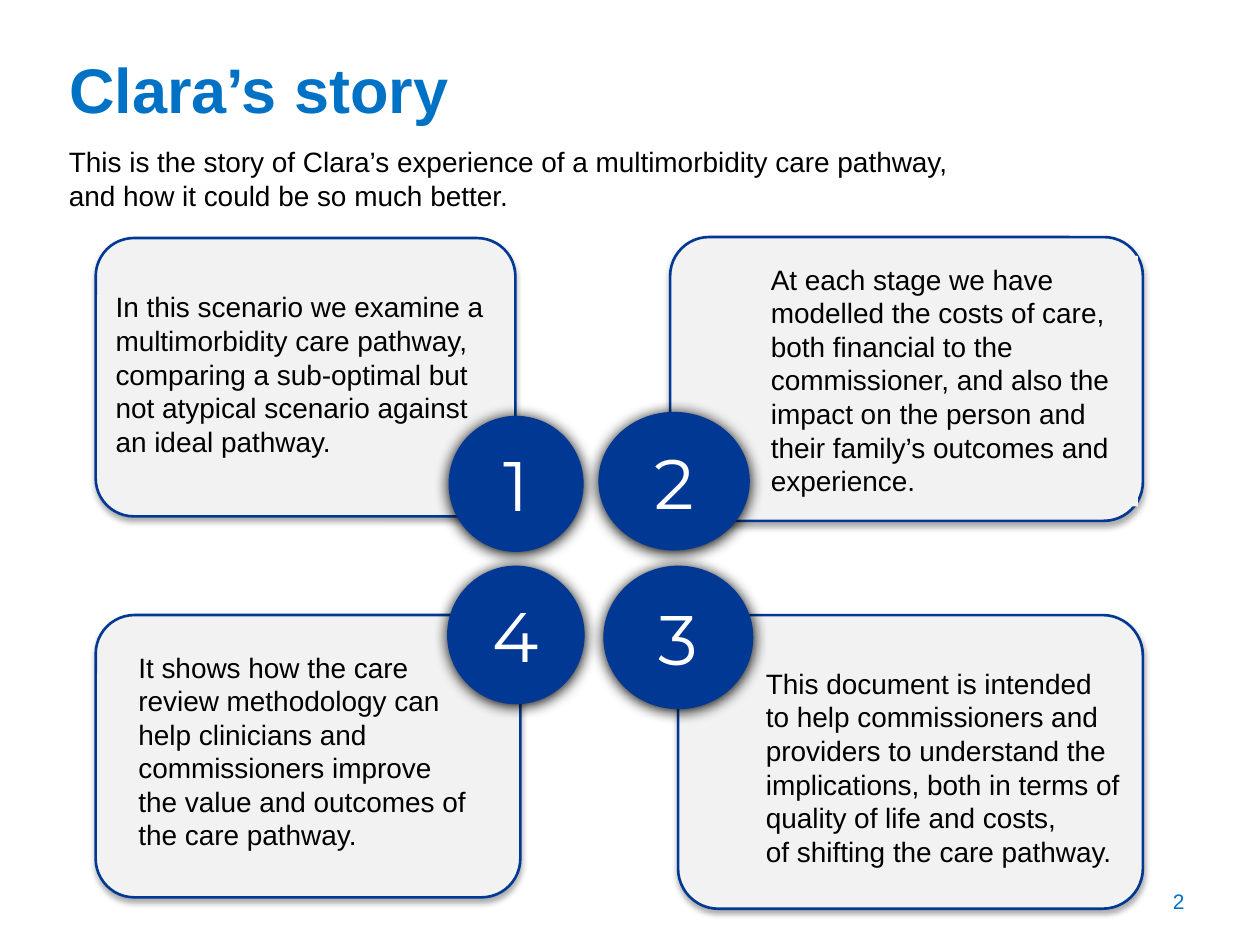
from lxml import etree
from pptx import Presentation
from pptx.dml.color import RGBColor
from pptx.enum.shapes import MSO_SHAPE
from pptx.enum.text import MSO_ANCHOR, PP_ALIGN
from pptx.oxml.ns import qn
from pptx.util import Cm, Pt

ROUNDED, RECTANGLE, OVAL = MSO_SHAPE.ROUNDED_RECTANGLE, MSO_SHAPE.RECTANGLE, MSO_SHAPE.OVAL
LEFT, CENTER, RIGHT = PP_ALIGN.LEFT, PP_ALIGN.CENTER, PP_ALIGN.RIGHT
TOP, MIDDLE = MSO_ANCHOR.TOP, MSO_ANCHOR.MIDDLE

BLUE = RGBColor(0x00, 0x72, 0xC6)
NAVY = RGBColor(0x00, 0x38, 0x93)
PALE_GREY = RGBColor(0xF2, 0xF2, 0xF2)
BLACK = RGBColor(0, 0, 0)
WHITE = RGBColor(0xFF, 0xFF, 0xFF)
BODY_FONT = "Arial"
NUMBER_FONT = "Montserrat"

TITLE = "Clara’s story"
INTRODUCTION = ("This is the story of Clara’s experience of a multimorbidity care pathway, "
                "and how it could be so much better.")

STEPS = [
    ("1", (1.93, 4.8, 8.46, 5.61), (0.15, 0.92, 8.03, 3.68), (7.14, 3.61, 2.67, 2.69),
     ["In this scenario we examine a multimorbidity care pathway, comparing a sub-optimal "
      "but not atypical scenario against an ideal pathway."]),
    ("4", (1.93, 12.4, 8.56, 5.69), (0.61, 0.58, 7.19, 4.37), (7.11, -0.97, 2.72, 2.74),
     ["It shows how the care review methodology can help clinicians and commissioners "
      "improve the value and outcomes of the care pathway."]),
    ("3", (13.67, 12.4, 9.37, 5.92), (1.52, 0.91, 7.65, 4.37), (-1.48, -0.97, 2.97, 2.84),
     ["This document is intended to help commissioners and providers to understand the "
      "implications, both in terms of quality of life and costs, ",
      "of shifting the care pathway."]),
    ("2", (13.51, 4.78, 9.53, 5.72), (1.78, 0.38, 7.65, 5.05), (-1.42, 3.55, 3, 2.74),
     ["At each stage we have modelled the costs of care, both financial to the commissioner, "
      "and also the impact on the person and their family’s outcomes and experience."]),
]


def to_lengths(box):
    return [Cm(value) for value in box]


def inside(panel, box):
    return panel[0] + box[0], panel[1] + box[1], box[2], box[3]


def write_text(shape, lines, size, color, font=BODY_FONT, align=LEFT, anchor=TOP, bold=False):
    frame = shape.text_frame
    frame.word_wrap = True
    frame.vertical_anchor = anchor
    paragraph = frame.paragraphs[0]
    paragraph.alignment = align
    for index, line in enumerate(lines):
        if index:
            paragraph.add_line_break()
        run = paragraph.add_run()
        run.text = line
        run.font.name = font
        run.font.size = Pt(size)
        run.font.bold = bold
        run.font.color.rgb = color


def add_filled_shape(slide, kind, box, fill, line=None):
    shape = slide.shapes.add_shape(kind, *to_lengths(box))
    shape.fill.solid()
    shape.fill.fore_color.rgb = fill
    if line is None:
        shape.line.fill.background()
    else:
        shape.line.color.rgb = line
        shape.line.width = Pt(1.5)
    shape.shadow.inherit = False
    return shape


def add_shadow(shape, opacity, blur, distance):
    effects = shape._element.spPr.find(qn("a:effectLst"))
    shadow = etree.SubElement(effects, qn("a:outerShdw"), blurRad=str(Pt(blur)),
                              dist=str(Pt(distance)), dir="5400000", rotWithShape="0")
    color = etree.SubElement(shadow, qn("a:srgbClr"), val=str(BLACK))
    etree.SubElement(color, qn("a:alpha"), val=str(opacity * 1000))


def add_heading(slide, box):
    left, top, width, height = box
    title = slide.shapes.title
    title.left, title.top, title.width, title.height = to_lengths((left, top, width, 1.85))
    write_text(title, [TITLE], 36, BLUE, anchor=MIDDLE, bold=True)
    introduction = slide.shapes.add_textbox(
        *to_lengths((left, top + 1.93, 19.23, height - 1.93)))
    write_text(introduction, [INTRODUCTION], 16, BLACK)


def add_step(slide, number, panel_box, text_box, circle_box, lines):
    panel = add_filled_shape(slide, ROUNDED, panel_box, PALE_GREY, NAVY)
    panel.adjustments[0] = 0.137
    add_shadow(panel, 32, 3.5, 2.2)

    text = add_filled_shape(slide, RECTANGLE, inside(panel_box, text_box), PALE_GREY)
    write_text(text, lines, 16, BLACK)

    circle = add_filled_shape(slide, OVAL, inside(panel_box, circle_box), NAVY, NAVY)
    add_shadow(circle, 100, 8.5, 1)
    write_text(circle, [number], 40, WHITE, NUMBER_FONT, CENTER, MIDDLE)


def add_page_number(slide, box):
    page_number = slide.shapes.add_textbox(*to_lengths(box))
    write_text(page_number, ["2"], 12, BLUE, align=RIGHT, anchor=MIDDLE)


def main():
    presentation = Presentation()
    presentation.slide_width = Cm(25.4)
    presentation.slide_height = Cm(19.05)
    slide = presentation.slides.add_slide(presentation.slide_layouts[5])
    add_heading(slide, (1.14, 0.86, 20.45, 4.75))
    for step in STEPS:
        add_step(slide, *step)
    add_page_number(slide, (18.21, 17.65, 5.92, 1.02))
    presentation.save("out.pptx")


if __name__ == "__main__":
    main()
